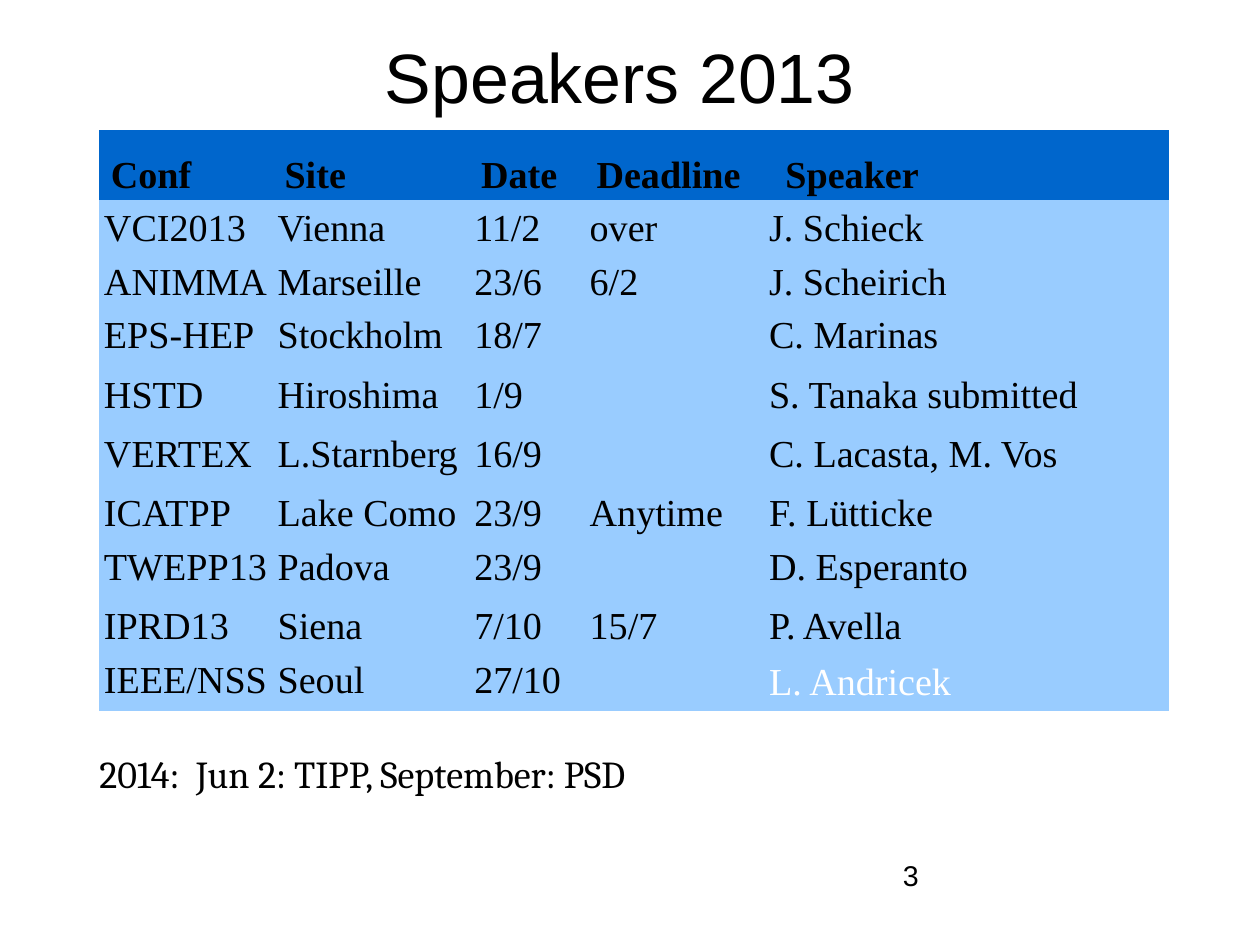
from lxml.etree import SubElement
from pptx import Presentation
from pptx.dml.color import RGBColor
from pptx.enum.text import MSO_ANCHOR, MSO_AUTO_SIZE, PP_ALIGN
from pptx.oxml.ns import qn
from pptx.util import Cm, Inches, Pt

BLACK, WHITE, HEADER_BLUE, ROW_BLUE = "000000", "FFFFFF", "0066CC", "99CCFF"
NO_STYLE_NO_GRID = "{2D5ABB26-0587-4C30-8999-92F81FD0307C}"

COLUMN_WIDTHS = [1.52, 1.72, 1.01, 1.57, 3.54]
HEADINGS = ["Conf", "Site", "Date", "Deadline", " Speaker"]
CONFERENCES = [
    ["VCI2013", "Vienna", "11/2", "over", "J. Schieck"],
    ["ANIMMA", "Marseille", "23/6", "6/2", "J. Scheirich"],
    ["EPS-HEP", "Stockholm", "18/7", "", "C. Marinas"],
    ["HSTD", "Hiroshima", "1/9", "", "S. Tanaka submitted"],
    ["VERTEX", "L.Starnberg", "16/9", "", "C. Lacasta, M. Vos"],
    ["ICATPP", "Lake Como", "23/9", "Anytime", "F. Lütticke"],
    ["TWEPP13", "Padova", "23/9", "", "D. Esperanto"],
    ["IPRD13", "Siena", "7/10", "15/7", "P. Avella"],
    ["IEEE/NSS", "Seoul", "27/10", "", "L. Andricek"],
]


def rgb(value):
    return RGBColor.from_string(value)


def place(shape, left, top, width, height):
    shape.left, shape.top = Inches(left), Inches(top)
    shape.width, shape.height = Inches(width), Inches(height)


def set_margins(box, left, top, right, bottom):
    box.margin_left, box.margin_top = Inches(left), Inches(top)
    box.margin_right, box.margin_bottom = Inches(right), Inches(bottom)


def write(frame, text, font, size, color=BLACK, bold=False, spacing=0.93):
    frame.text = text
    para = frame.paragraphs[0]
    para.line_spacing = spacing
    for span in para.runs:
        span.font.name, span.font.size = font, Pt(size)
        span.font.bold = bold
        span.font.color.rgb = rgb(color)
    return para


def prepare_frame(shape, top_margin, anchor):
    frame = shape.text_frame
    frame.word_wrap = True
    frame.auto_size = MSO_AUTO_SIZE.NONE
    frame.vertical_anchor = anchor
    set_margins(frame, 0, top_margin, 0, 0)
    return frame


def add_title(page, text):
    title = page.shapes.title
    place(title, 0.47, 0, 9.91, 1.37)
    frame = prepare_frame(title, 0.04, MSO_ANCHOR.MIDDLE)
    para = write(frame, text, "Arial", 44)
    para.alignment = PP_ALIGN.CENTER


def fill_cell(cell, text, fill, margins, **style):
    cell.fill.solid()
    cell.fill.fore_color.rgb = rgb(fill)
    if text:
        set_margins(cell, *margins)
        write(cell.text_frame, text, "Times New Roman", 24, **style)


def add_speaker_table(page):
    # Full rows grow to fit their text; rows with an open deadline are taller
    heights = [0.39] + [0.41 if row[3] else 0.52 for row in CONFERENCES]
    frame = page.shapes.add_table(
        len(heights), len(COLUMN_WIDTHS), Inches(0.87), Inches(1.14),
        Inches(sum(COLUMN_WIDTHS)), Inches(sum(heights)))
    table = frame.table
    table.first_row = table.horz_banding = False
    table._tbl.tblPr.find(qn("a:tableStyleId")).text = NO_STYLE_NO_GRID
    for column, width in zip(table.columns, COLUMN_WIDTHS):
        column.width = Inches(width)
    for row, height in zip(table.rows, heights):
        row.height = Inches(height)

    # Header row
    for index, heading in enumerate(HEADINGS):
        fill_cell(table.cell(0, index), heading, HEADER_BLUE,
                  (0.1, 0.29, 0.1, 0.05), bold=True, spacing=0.74)

    # Conference rows; the last speaker stands out in white
    for number, conference in enumerate(CONFERENCES, start=1):
        for index, text in enumerate(conference):
            marked = text == "L. Andricek"
            fill_cell(table.cell(number, index), text, ROW_BLUE,
                      (0.04, 0.11, 0.04, 0.04),
                      color=WHITE if marked else BLACK,
                      spacing=0.93 if marked else 0.86)


def add_outlook(page, text):
    body = page.placeholders[1]
    place(body, 0.87, 6.57, 9.91, 0.71)
    frame = prepare_frame(body, 0.03, MSO_ANCHOR.TOP)
    para = write(frame, text, "Cambria", 24)
    para.space_before, para.space_after = Pt(0), Pt(14.2)
    # Hanging indent without a bullet
    properties = para._p.get_or_add_pPr()
    properties.set("marL", str(Inches(0.38)))
    properties.set("indent", str(Inches(-0.38)))
    SubElement(properties, qn("a:buNone"))


def add_page_number(page, text):
    box = page.shapes.add_textbox(
        Inches(7.9), Inches(7.53), Inches(2.56), Inches(0.56))
    frame = prepare_frame(box, 0, MSO_ANCHOR.TOP)
    write(frame, text, "Arial", 18)


def main():
    deck = Presentation()
    # Standard 28 by 21 cm page
    deck.slide_width, deck.slide_height = Cm(28), Cm(21)
    page = deck.slides.add_slide(deck.slide_layouts[1])
    add_title(page, "Speakers 2013")
    add_speaker_table(page)
    add_page_number(page, "3")
    add_outlook(page, "2014:  Jun 2: TIPP, September: PSD")
    deck.save("out.pptx")


if __name__ == "__main__":
    main()
